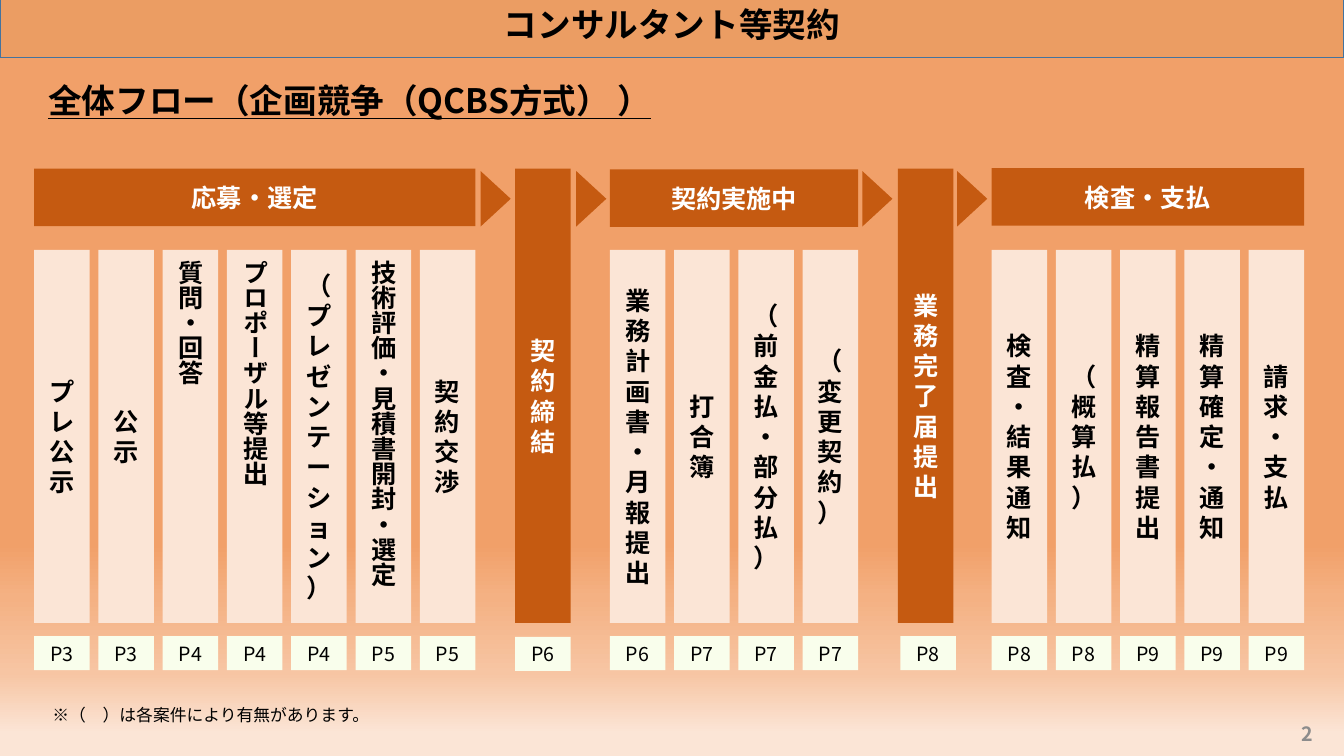
import pptx
import pptx.util
import pptx.dml.color
import pptx.enum.shapes
import pptx.enum.text
import pptx.oxml
import pptx.oxml.ns
from lxml import etree

Cm = pptx.util.Cm
qn = pptx.oxml.ns.qn
SHAPES = pptx.enum.shapes.MSO_SHAPE
ALIGN = pptx.enum.text.PP_ALIGN
ANCHOR = pptx.enum.text.MSO_ANCHOR

STACKED = "wordArtVertRtl"
VERTICAL = "eaVert"

COLUMN_WIDTH = 1.4
COLUMN_PITCH = 1.62
STAGE_TOP = 4.25
COLUMN_TOP = 6.3
COLUMN_BOTTOM = 15.7
PAGE_TOP = 16.03

# left, top, title, steps as (text, page, text direction)
PHASES = [
    (0.86, 4.25, "応募・選定", [
        ("プレ公示", "P3", None),
        ("公示", "P3", None),
        ("質問・回答", "P4", VERTICAL),
        ("プロポーザル等提出", "P4", VERTICAL),
        ("（プレゼンテーション）", "P4", STACKED),
        ("技術評価・見積書開封・選定", "P5", VERTICAL),
        ("契約交渉", "P5", None),
    ]),
    (15.37, 4.27, "契約実施中", [
        ("業務計画書・月報提出", "P6", None),
        ("打合簿", "P7", None),
        ("（前金払・部分払）", "P7", STACKED),
        ("（変更契約）", "P7", STACKED),
    ]),
    (24.99, 4.24, "検査・支払", [
        ("検査・結果通知", "P8", None),
        ("（概算払）", "P8", STACKED),
        ("精算報告書提出", "P9", None),
        ("精算確定\n・通知", "P9", None),
        ("請求・支払", "P9", None),
    ]),
]

# left, title, page, left and top of the page box
MILESTONES = [
    (12.98, "契約締結", "P6", 12.98, 16.05),
    (22.63, "業務完了届提出", "P8", 22.69, PAGE_TOP),
]

ARROW_LEFTS = [11.79, 14.2, 21.41, 23.8]


def rgb(value):
    return pptx.dml.color.RGBColor.from_string(value)


class FlowSlide:
    FONT = "Noto Sans CJK JP"
    BLACK, WHITE, GREY = "000000", "FFFFFF", "8C8C8C"
    STAGE, STEP, PAGE = "C55A11", "FBE5D6", "F9FEEC"
    BANNER, BANNER_LINE = "EB9D63", "43739E"

    def __init__(self, deck):
        self.slide = deck.slides.add_slide(deck.slide_layouts[6])

    def gradient(self, stops):
        """Fill the background from top to bottom with (percent, colour) stops."""
        fill = self.slide.background.fill
        fill.gradient()
        fill.gradient_angle = 270
        stop_list = self.slide.element.find(".//" + qn("a:gsLst"))
        for old in list(stop_list):
            stop_list.remove(old)
        for percent, colour in stops:
            stop = etree.SubElement(stop_list, qn("a:gs"), pos=str(percent * 1000))
            etree.SubElement(stop, qn("a:srgbClr"), val=colour)

    def set_text(self, shape, text, size, colour, bold, align, underline=None):
        frame = shape.text_frame
        frame.word_wrap = True
        frame.vertical_anchor = ANCHOR.MIDDLE
        frame.text = text
        for paragraph in frame.paragraphs:
            paragraph.alignment = align
            font = paragraph.font
            font.name = self.FONT
            font.size = pptx.util.Pt(size)
            font.bold = bold
            font.underline = underline
            font.color.rgb = rgb(colour)
            defaults = paragraph._p.find(".//" + qn("a:defRPr"))
            etree.SubElement(defaults, qn("a:ea"), typeface=self.FONT)

    def label(self, box, text, size, colour=BLACK, bold=False,
              align=ALIGN.LEFT, underline=None):
        shape = self.slide.shapes.add_textbox(*map(Cm, box))
        self.set_text(shape, text, size, colour, bold, align, underline)

    def block(self, box, fill, kind=SHAPES.RECTANGLE, line=None):
        shape = self.slide.shapes.add_shape(kind, *map(Cm, box))
        shape.shadow.inherit = False
        shape.fill.solid()
        shape.fill.fore_color.rgb = rgb(fill)
        if line:
            shape.line.color.rgb = rgb(line)
            shape.line.width = pptx.util.Pt(1)
        else:
            shape.line.fill.background()
        return shape

    def banner(self, text):
        shape = self.block((0, -0.25, 33.87, 1.7), self.BANNER,
                           SHAPES.FLOWCHART_PROCESS, self.BANNER_LINE)
        self.set_text(shape, text, 24, self.BLACK, True, ALIGN.CENTER)

    def stage(self, left, top, width, height, text):
        shape = self.block((left, top, width, height), self.STAGE)
        self.set_text(shape, text, 18, self.WHITE, True, ALIGN.CENTER)

    def step(self, left, text, direction):
        shape = self.block((left, COLUMN_TOP, COLUMN_WIDTH, COLUMN_BOTTOM - COLUMN_TOP),
                           self.STEP)
        self.set_text(shape, text, 18, self.BLACK, True, ALIGN.CENTER)
        if direction:
            shape.text_frame._txBody.bodyPr.set("vert", direction)

    def page(self, left, text, top=PAGE_TOP):
        shape = self.block((left, top, COLUMN_WIDTH, 0.86), self.PAGE)
        self.set_text(shape, text, 14, self.BLACK, False, ALIGN.CENTER)

    def arrow(self, left):
        shape = self.block((left, 4.63, 1.4, 0.76), self.STAGE,
                           SHAPES.ISOSCELES_TRIANGLE)
        shape.rotation = 90


def main():
    deck = pptx.Presentation()
    deck.slide_width, deck.slide_height = Cm(33.87), Cm(19.05)
    flow = FlowSlide(deck)
    flow.gradient([(72, "F1A069"), (79, "F4B183"), (89, "F7C5A3"), (97, "FBE5D6")])

    flow.banner("コンサルタント等契約")
    flow.label((0.97, 1.7, 30.48, 1.65), "全体フロー（企画競争（QCBS方式） ）", 24,
               bold=True, underline=True)

    for left, top, title, steps in PHASES:
        width = (len(steps) - 1) * COLUMN_PITCH + COLUMN_WIDTH
        flow.stage(left, top, width, 1.45, title)
        for index, (text, page, direction) in enumerate(steps):
            step_left = left + index * COLUMN_PITCH
            flow.step(step_left, text, direction)
            flow.page(step_left, page)

    for left, title, page, page_left, page_top in MILESTONES:
        flow.stage(left, STAGE_TOP, COLUMN_WIDTH, COLUMN_BOTTOM - STAGE_TOP, title)
        flow.page(page_left, page, page_top)

    for left in ARROW_LEFTS:
        flow.arrow(left)

    flow.label((1.07, 17.63, 10.52, 0.76), "※（　）は各案件により有無があります。", 12)
    flow.label((25.73, 17.98, 7.62, 1.02), "2", 14, flow.GREY, True, ALIGN.RIGHT)
    deck.save("out.pptx")


if __name__ == "__main__":
    main()
